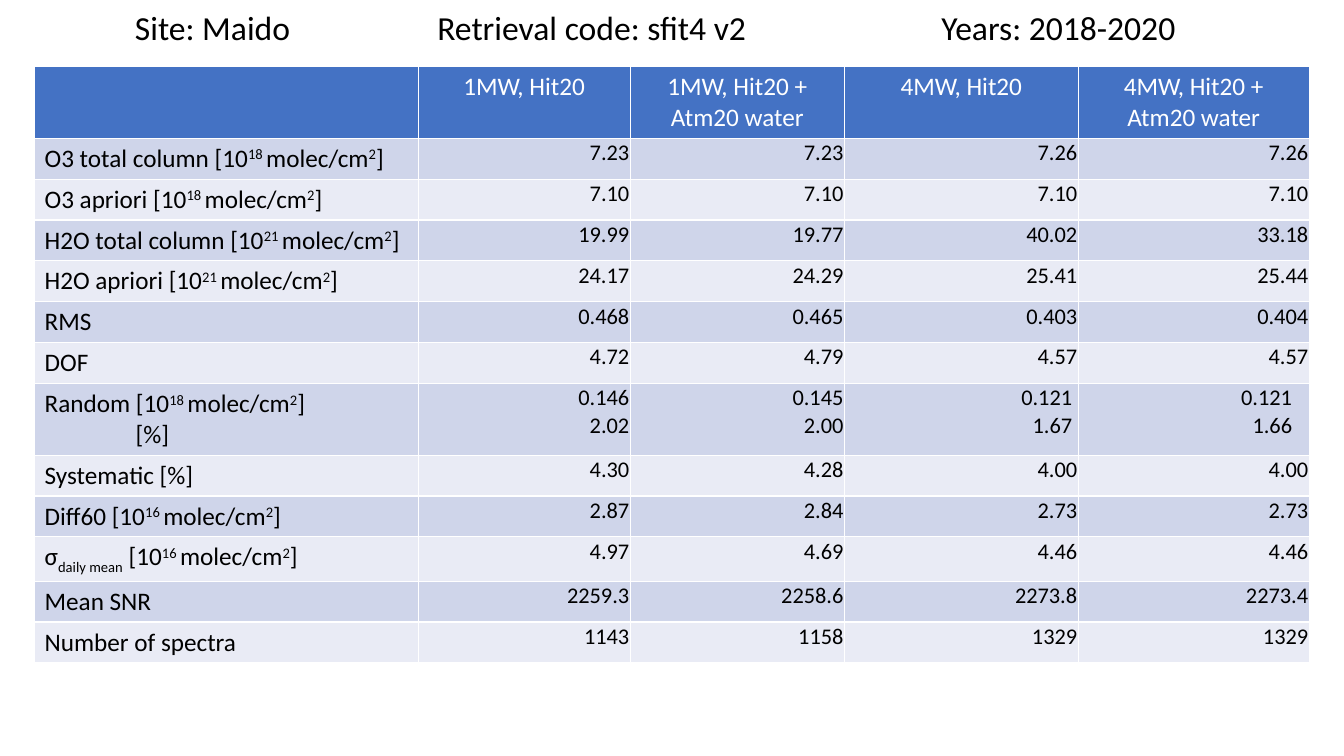
from pptx import Presentation
from pptx.dml.color import RGBColor
from pptx.enum.text import MSO_ANCHOR, PP_ALIGN
from pptx.oxml.ns import qn
from pptx.util import Pt
from lxml.etree import SubElement

COLORS = {"header": "4472C4", "odd": "CFD5EA", "even": "E9EBF5",
          "white": "FFFFFF", "black": "000000"}
FONT = "Calibri"


def add_text(paragraph, text, size, color="black", baseline=0):
    run = paragraph.add_run()
    run.text = text
    run.font.name = FONT
    run.font.size = Pt(size)
    run.font.bold = False
    run.font.color.rgb = RGBColor.from_string(COLORS[color])
    if baseline:
        run.font._element.set("baseline", str(baseline * 1000))


def with_unit(name, exponent):
    """Label pieces, each a text and its baseline shift in percent."""
    return [(name + "[10", 0), (exponent + " ", 30), ("molec/cm", 0), ("2", 30), ("]", 0)]


presentation = Presentation()
presentation.slide_width, presentation.slide_height = Pt(960), Pt(540)
slide = presentation.slides.add_slide(presentation.slide_layouts[6])

# Table content: label pieces, then one or two lines of values
headers = ["", "1MW, Hit20", "1MW, Hit20 + Atm20 water",
           "4MW, Hit20", "4MW, Hit20 + Atm20 water"]
rows = [
    (with_unit("O3 total column ", "18"), ["7.23 7.23 7.26 7.26"]),
    (with_unit("O3 apriori ", "18"), ["7.10 7.10 7.10 7.10"]),
    (with_unit("H2O total column ", "21"), ["19.99 19.77 40.02 33.18"]),
    (with_unit("H2O apriori ", "21"), ["24.17 24.29 25.41 25.44"]),
    ([("RMS", 0)], ["0.468 0.465 0.403 0.404"]),
    ([("DOF", 0)], ["4.72 4.79 4.57 4.57"]),
    (with_unit("Random ", "18"), ["0.146 0.145 0.121 0.121", "2.02 2.00 1.67 1.66"]),
    ([("Systematic [%]", 0)], ["4.30 4.28 4.00 4.00"]),
    (with_unit("Diff60 ", "16"), ["2.87 2.84 2.73 2.73"]),
    ([("σ", 0), ("daily mean", -25)] + with_unit(" ", "16"), ["4.97 4.69 4.46 4.46"]),
    ([("Mean SNR", 0)], ["2259.3 2258.6 2273.8 2273.4"]),
    ([("Number of spectra", 0)], ["1143 1158 1329 1329"]),
]
column_widths = [274, 151.5, 153, 167, 165]
right_indents = {3: 3.6, 4: 11.5}  # first value line of the Random row

# Table with header row
frame = slide.shapes.add_table(len(rows) + 1, len(headers), Pt(24.7), Pt(47.6),
                               Pt(sum(column_widths)), Pt(422))
table = frame.table
for column, width in zip(table.columns, column_widths):
    column.width = Pt(width)
table.rows[0].height = Pt(50.4)
for index, header in enumerate(headers):
    cell = table.cell(0, index)
    cell.fill.solid()
    cell.fill.fore_color.rgb = RGBColor.from_string(COLORS["header"])
    paragraph = cell.text_frame.paragraphs[0]
    paragraph.alignment = PP_ALIGN.CENTER
    if header:
        add_text(paragraph, header, 18, "white")

# Body rows
for row, (label, lines) in enumerate(rows, start=1):
    table.rows[row].height = Pt(50.4 if len(lines) == 2 else 29.2)
    for index in range(len(headers)):
        cell = table.cell(row, index)
        cell.fill.solid()
        cell.fill.fore_color.rgb = RGBColor.from_string(COLORS["odd" if row % 2 else "even"])
        paragraph = cell.text_frame.paragraphs[0]
        if index == 0:
            for text, baseline in label:
                add_text(paragraph, text, 18, baseline=baseline)
            if len(lines) == 2:
                paragraph = cell.text_frame.add_paragraph()
                paragraph._p.get_or_add_pPr().set("marL", str(Pt(65)))
                add_text(paragraph, "[%]", 18)
            continue
        cell.margin_left = cell.margin_right = cell.margin_top = Pt(0.7)
        cell.margin_bottom = 0
        cell.vertical_anchor = MSO_ANCHOR.TOP
        for number, line in enumerate(lines):
            if number:
                paragraph = cell.text_frame.add_paragraph()
            elif len(lines) == 2 and index in right_indents:
                paragraph._p.get_or_add_pPr().set("marR", str(Pt(right_indents[index])))
            paragraph.alignment = PP_ALIGN.RIGHT
            add_text(paragraph, line.split()[index - 1], 16)

# Title line with tab stops
title = slide.shapes.add_textbox(Pt(89.3), Pt(1.4), Pt(759.6), Pt(36))
title.text_frame.word_wrap = True
paragraph = title.text_frame.paragraphs[0]
tab_list = SubElement(paragraph._p.get_or_add_pPr(), qn("a:tabLst"))
for position in (216, 576):
    SubElement(tab_list, qn("a:tab"), pos=str(Pt(position)), algn="l")
add_text(paragraph, "Site: Maido\tRetrieval code: sfit4 v2\tYears: 2018-2020", 24)

presentation.save("out.pptx")
